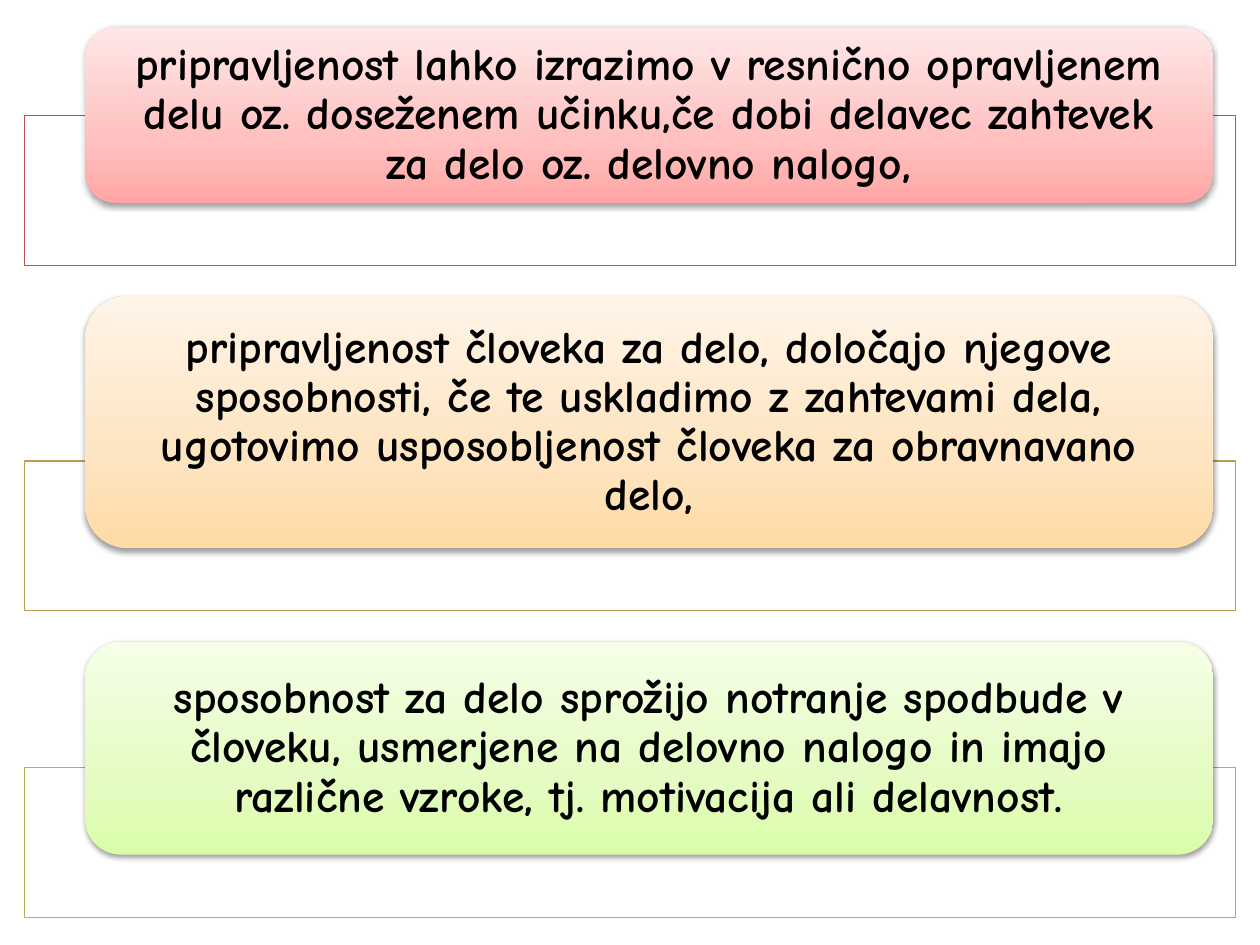
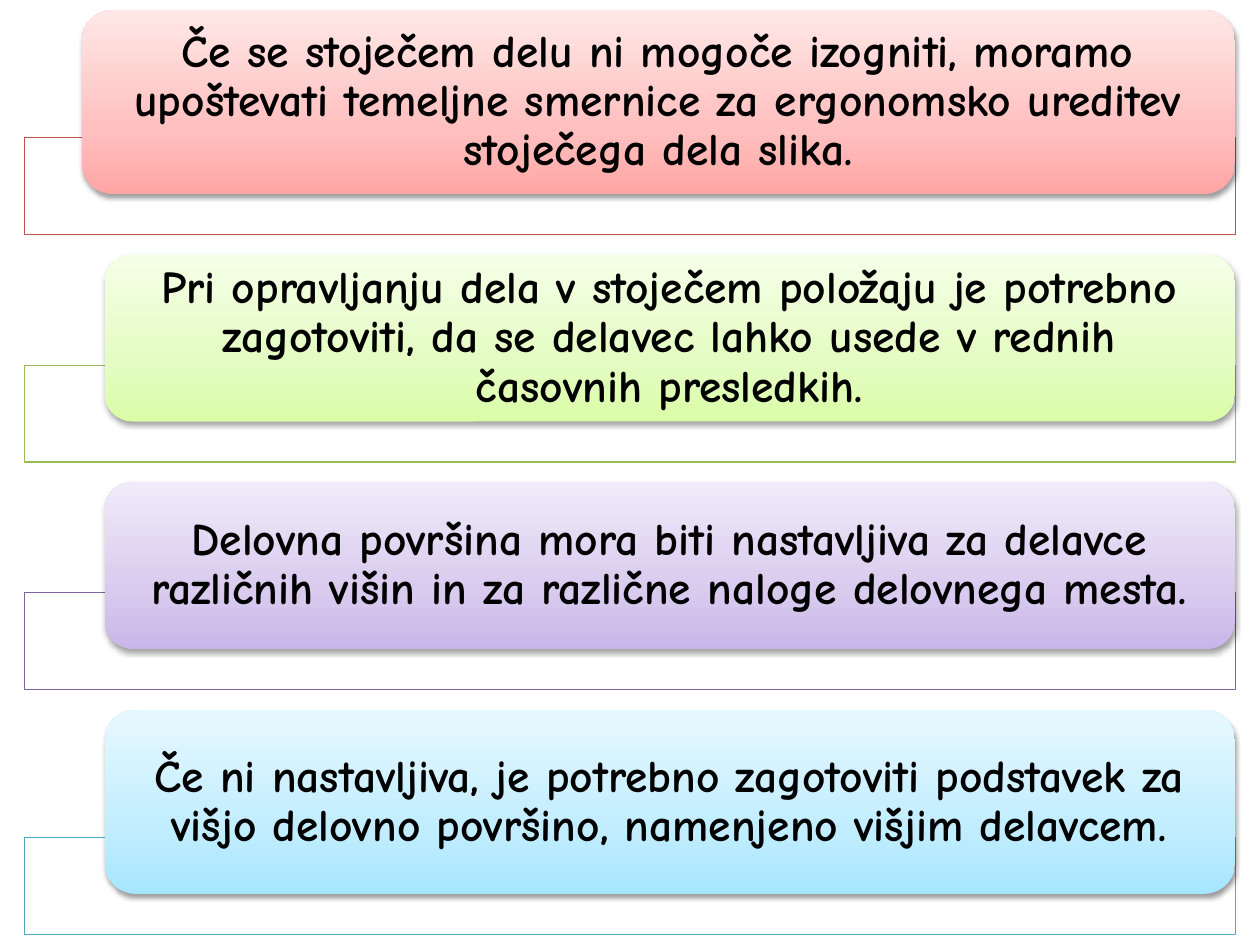
from copy import deepcopy
from dataclasses import dataclass

from lxml import etree
from pptx import Presentation
from pptx.dml.color import RGBColor
from pptx.enum import shapes, text
from pptx.oxml import ns
from pptx.util import Pt

# Shared style
FONT_NAME = "Comic Neue"
FONT_SIZE = 26
FRAME_LEFT = 14.1
FRAME_WIDTH = 691.8


@dataclass(frozen=True)
class Theme:
    line: str
    stops: tuple[str, str, str]  # from bottom to top


RED = Theme("C0504D", ("FFA6A5", "FFC0BF", "FFE7E7"))
GOLD = Theme("BD9B53", ("FFDAA5", "FEE4C0", "FFF4E7"))
GREEN = Theme("9BBB59", ("DAFDA7", "E4FCC2", "F5FFE7"))
PURPLE = Theme("8064A2", ("C9B5E8", "D8CBEE", "F0EAF9"))
BLUE = Theme("4BACC6", ("A7E6FF", "C1EDFF", "E7F8FF"))


@dataclass(frozen=True)
class Card:
    wording: str
    theme: Theme
    left: float
    width: float
    height: float


@dataclass(frozen=True)
class Stack:
    top: float
    frame_height: float
    overlap: float  # how far a card reaches down into its frame
    gap: float
    cards: tuple[Card, ...]


READINESS = Stack(15.8, 85.7, 49.9, 17.6, (
    Card("pripravljenost lahko izrazimo v resnično opravljenem delu oz. doseženem "
         "učinku,če dobi delavec zahtevek za delo oz. delovno nalogo,",
         RED, 48.8, 644.4, 100.1),
    Card("pripravljenost človeka za delo, določajo njegove sposobnosti, če te "
         "uskladimo z zahtevami dela, ugotovimo usposobljenost človeka za "
         "obravnavano delo,",
         GOLD, 48.8, 644.4, 144),
    Card("sposobnost za delo sprožijo notranje spodbude v človeku, usmerjene na "
         "delovno nalogo in imajo različne vzroke, tj. motivacija ali delavnost.",
         GREEN, 48.8, 644.4, 121.7),
))

STANDING_WORK = Stack(5.8, 55.4, 32.2, 11.6, (
    Card("Če se stoječem delu ni mogoče izogniti, moramo upoštevati temeljne "
         "smernice za ergonomsko ureditev stoječega dela slika.",
         RED, 46.8, 658.8, 105.1),
    Card("Pri opravljanju dela v stoječem položaju je potrebno zagotoviti, da se "
         "delavec lahko usede v rednih časovnih presledkih.",
         GREEN, 59.9, 645.8, 95.2),
    Card("Delovna površina mora biti nastavljiva za delavce različnih višin in za "
         "različne naloge delovnega mesta.",
         PURPLE, 59.9, 645.8, 95.2),
    Card("Če ni nastavljiva, je potrebno zagotoviti podstavek za višjo delovno "
         "površino, namenjeno višjim delavcem.",
         BLUE, 59.9, 645.8, 105.1),
))


def color(value: str) -> RGBColor:
    return RGBColor.from_string(value)


def add_child(parent, tag: str, **attributes):
    return etree.SubElement(parent, ns.qn(tag), attributes)


def add_shadow(shape) -> None:
    shape.shadow.inherit = False
    effects = shape._element.spPr.find(ns.qn("a:effectLst"))
    shadow = add_child(effects, "a:outerShdw", blurRad="40000", dist="20000",
                       dir="5400000", rotWithShape="0")
    black = add_child(shadow, "a:srgbClr", val="000000")
    add_child(black, "a:alpha", val="38000")


def fill_gradient(shape, colors: tuple[str, str, str]) -> None:
    shape.fill.gradient()
    shape.fill.gradient_angle = 90
    stop_list = shape._element.spPr.find(".//" + ns.qn("a:gsLst"))
    stop_list.append(deepcopy(stop_list[0]))
    for stop, position, value in zip(shape.fill.gradient_stops, (0, 0.35, 1), colors):
        stop.position = position
        stop.color.rgb = color(value)


def draw_frame(page, top: float, height: float, line: str) -> None:
    frame = page.shapes.add_shape(shapes.MSO_SHAPE.RECTANGLE, Pt(FRAME_LEFT), Pt(top),
                                  Pt(FRAME_WIDTH), Pt(height))
    frame.shadow.inherit = False
    frame.fill.solid()
    frame.fill.fore_color.rgb = color("FFFFFF")
    white = frame._element.spPr.find(".//" + ns.qn("a:srgbClr"))
    add_child(white, "a:alpha", val="90000")
    frame.line.color.rgb = color(line)
    frame.line.width = Pt(0.75)


def draw_card(page, card: Card, top: float) -> None:
    box = page.shapes.add_shape(shapes.MSO_SHAPE.ROUNDED_RECTANGLE, Pt(card.left), Pt(top),
                                Pt(card.width), Pt(card.height))
    fill_gradient(box, card.theme.stops)
    box.line.fill.background()
    add_shadow(box)

    body = box.text_frame
    body.word_wrap = True
    body.vertical_anchor = text.MSO_ANCHOR.MIDDLE
    body.margin_left = body.margin_right = Pt(18)
    body.margin_top = body.margin_bottom = Pt(0)
    para = body.paragraphs[0]
    para.text = card.wording
    para.alignment = text.PP_ALIGN.CENTER
    para.line_spacing = 0.9
    para.font.name = FONT_NAME
    para.font.size = Pt(FONT_SIZE)
    para.font.bold = True
    para.font.color.rgb = color("000000")


def draw_stack(page, stack: Stack) -> None:
    top = stack.top
    for card in stack.cards:
        frame_top = top + card.height - stack.overlap
        draw_frame(page, frame_top, stack.frame_height, card.theme.line)
        draw_card(page, card, top)
        top = frame_top + stack.frame_height + stack.gap


def main() -> None:
    deck = Presentation()
    deck.slide_width, deck.slide_height = Pt(720), Pt(540)
    blank = deck.slide_layouts[6]
    for stack in (READINESS, STANDING_WORK):
        draw_stack(deck.slides.add_slide(blank), stack)
    deck.save("out.pptx")


if __name__ == "__main__":
    main()
